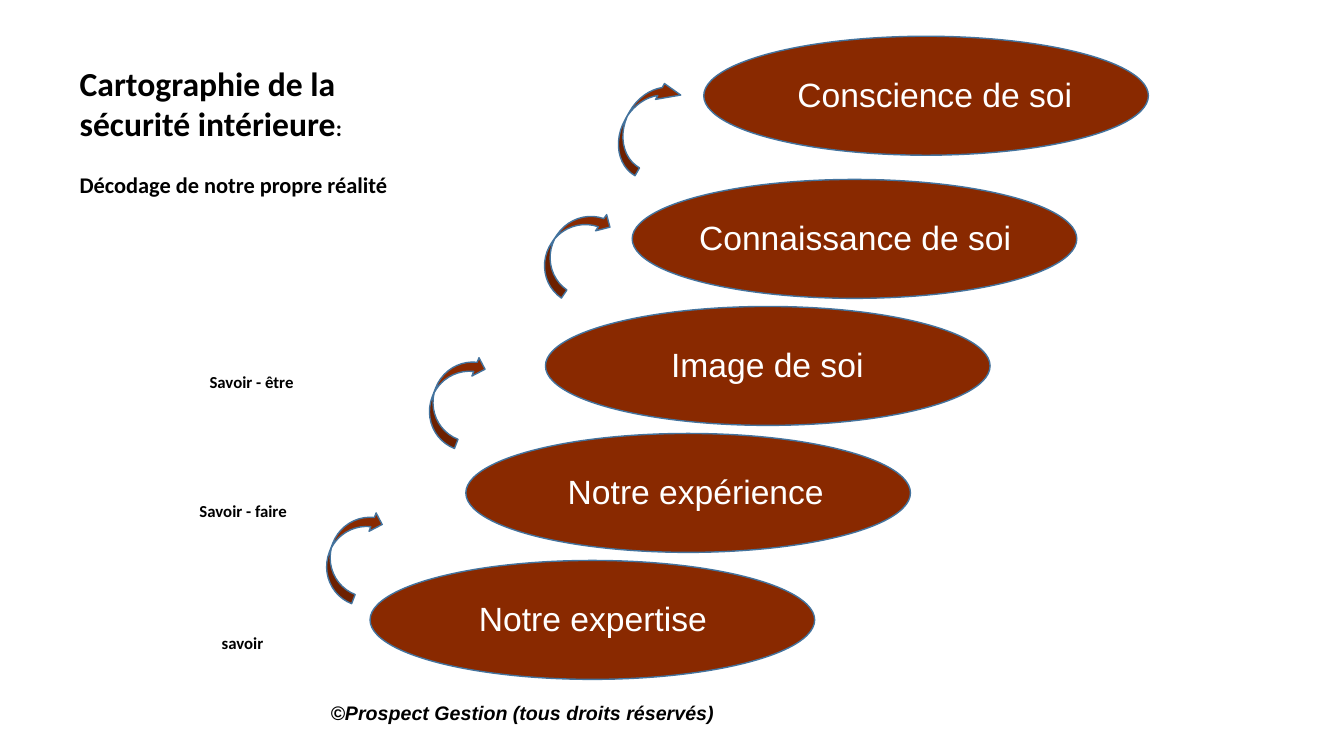
from dataclasses import dataclass

from pptx import Presentation
from pptx.dml.color import RGBColor
from pptx.enum.shapes import MSO_SHAPE as Shape
from pptx.enum.text import MSO_ANCHOR as Anchor, MSO_AUTO_SIZE as AutoSize, PP_ALIGN as Align
from pptx.shapes.autoshape import Shape as AutoShape
from pptx.slide import Slide
from pptx.util import Emu, Pt

EMU_PER_PX = 9144  # 100 px to the inch


@dataclass(frozen=True)
class Theme:
    fill: RGBColor = RGBColor(0x89, 0x29, 0x00)
    outline: RGBColor = RGBColor(0x43, 0x73, 0x9E)
    ink: RGBColor = RGBColor(0, 0, 0)
    light: RGBColor = RGBColor(0xFF, 0xFF, 0xFF)
    heading_font: str = "Calibri"
    body_font: str = "Arial"
    large: Pt = Pt(24)
    medium: Pt = Pt(16)
    copyright: Pt = Pt(14)
    small: Pt = Pt(12)
    outline_width: Pt = Pt(1)


@dataclass(frozen=True)
class Box:
    left: int
    top: int
    width: int
    height: int

    def emu(self) -> tuple[Emu, ...]:
        return tuple(Emu(v * EMU_PER_PX) for v in (self.left, self.top, self.width, self.height))


@dataclass(frozen=True)
class Step:
    label: str
    left: int
    top: int
    label_left: int


@dataclass(frozen=True)
class Arrow:
    box: Box
    rotation: float
    head_length: float = 0.25


@dataclass(frozen=True)
class Knowledge:
    label: str
    box: Box


THEME = Theme()
STEP_WIDTH, STEP_HEIGHT = 441, 118
LABEL_WIDTH, LABEL_HEIGHT, LABEL_OFFSET = 378, 51, 32
FIRST_TOP, STEP_PITCH = 178, 126

STEPS = [Step("Conscience de soi", 698, 36, 738)] + [
    Step(label, left, FIRST_TOP + i * STEP_PITCH, label_left)
    for i, (label, left, label_left) in enumerate([
        ("Connaissance de soi", 627, 659),
        ("Image de soi", 541, 572),
        ("Notre expérience", 462, 501),
        ("Notre expertise", 367, 399),
    ])
]
ARROWS = [
    Arrow(Box(328, 501, 39, 94), 201.1),
    Arrow(Box(430, 347, 39, 94), 201.1),
    Arrow(Box(548, 198, 39, 95), 214.4),
    Arrow(Box(621, 71, 36, 101), 209.5, 0.544),
]
KNOWLEDGE = [
    Knowledge("savoir", Box(210, 623, 66, 30)),
    Knowledge("Savoir - faire", Box(188, 492, 121, 30)),
    Knowledge("Savoir - être", Box(198, 364, 106, 30)),
]


def add_solid(slide: Slide, kind: Shape, box: Box) -> AutoShape:
    """Add a preset shape in the slide's fill and outline."""
    solid = slide.shapes.add_shape(kind, *box.emu())
    solid.shadow.inherit = False
    solid.fill.solid()
    solid.fill.fore_color.rgb = THEME.fill
    solid.line.color.rgb = THEME.outline
    solid.line.width = THEME.outline_width
    return solid


def add_text(slide: Slide, text: str, box: Box, font_name: str, size: Pt, color: RGBColor,
             bold: bool = False, italic: bool = False, align: Align = Align.LEFT,
             wrap: bool = True) -> None:
    frame = slide.shapes.add_textbox(*box.emu()).text_frame
    frame.word_wrap = wrap
    paragraph = frame.paragraphs[0]
    paragraph.text = text
    paragraph.alignment = align
    font = paragraph.font
    font.name, font.size, font.bold, font.italic = font_name, size, bold, italic
    font.color.rgb = color


def fill_title(slide: Slide) -> None:
    title = slide.shapes.title
    title.left, title.top, title.width, title.height = Box(69, 57, 363, 145).emu()
    frame = title.text_frame
    frame.auto_size = AutoSize.NONE
    frame.word_wrap = True
    frame.vertical_anchor = Anchor.TOP
    heading, subtitle = frame.paragraphs[0], frame.add_paragraph()
    heading.add_run().text = "Cartographie de la sécurité intérieure"
    colon = heading.add_run()
    colon.text = ":"
    colon.font.size = THEME.medium
    subtitle.text = "Décodage de notre propre réalité"
    subtitle.space_before = Pt(20)
    for paragraph, size in ((heading, THEME.large), (subtitle, THEME.medium)):
        paragraph.alignment = Align.LEFT
        paragraph.line_spacing = 1.0
        font = paragraph.font
        font.name, font.size, font.bold = THEME.heading_font, size, True
        font.color.rgb = THEME.ink


def add_step(slide: Slide, step: Step) -> None:
    add_solid(slide, Shape.OVAL, Box(step.left, step.top, STEP_WIDTH, STEP_HEIGHT))
    label_box = Box(step.label_left, step.top + LABEL_OFFSET, LABEL_WIDTH, LABEL_HEIGHT)
    add_text(slide, step.label, label_box, THEME.body_font, THEME.large, THEME.light,
             align=Align.CENTER)


def add_arrow(slide: Slide, arrow: Arrow) -> None:
    curve = add_solid(slide, Shape.CURVED_LEFT_ARROW, arrow.box)
    curve.rotation = arrow.rotation
    curve.adjustments[2] = arrow.head_length


def main() -> None:
    deck = Presentation()
    deck.slide_width, deck.slide_height = Box(0, 0, 1333, 750).emu()[2:]
    slide = deck.slides.add_slide(deck.slide_layouts.get_by_name("Title Only"))
    fill_title(slide)
    for step in STEPS:
        add_step(slide, step)
    for arrow in ARROWS:
        add_arrow(slide, arrow)
    for item in KNOWLEDGE:
        add_text(slide, item.label, item.box, THEME.heading_font, THEME.small, THEME.ink, bold=True)
    add_text(slide, "©Prospect Gestion (tous droits réservés)", Box(318, 690, 402, 34),
             THEME.body_font, THEME.copyright, THEME.ink, bold=True, italic=True, wrap=False)
    deck.save("out.pptx")


if __name__ == "__main__":
    main()
